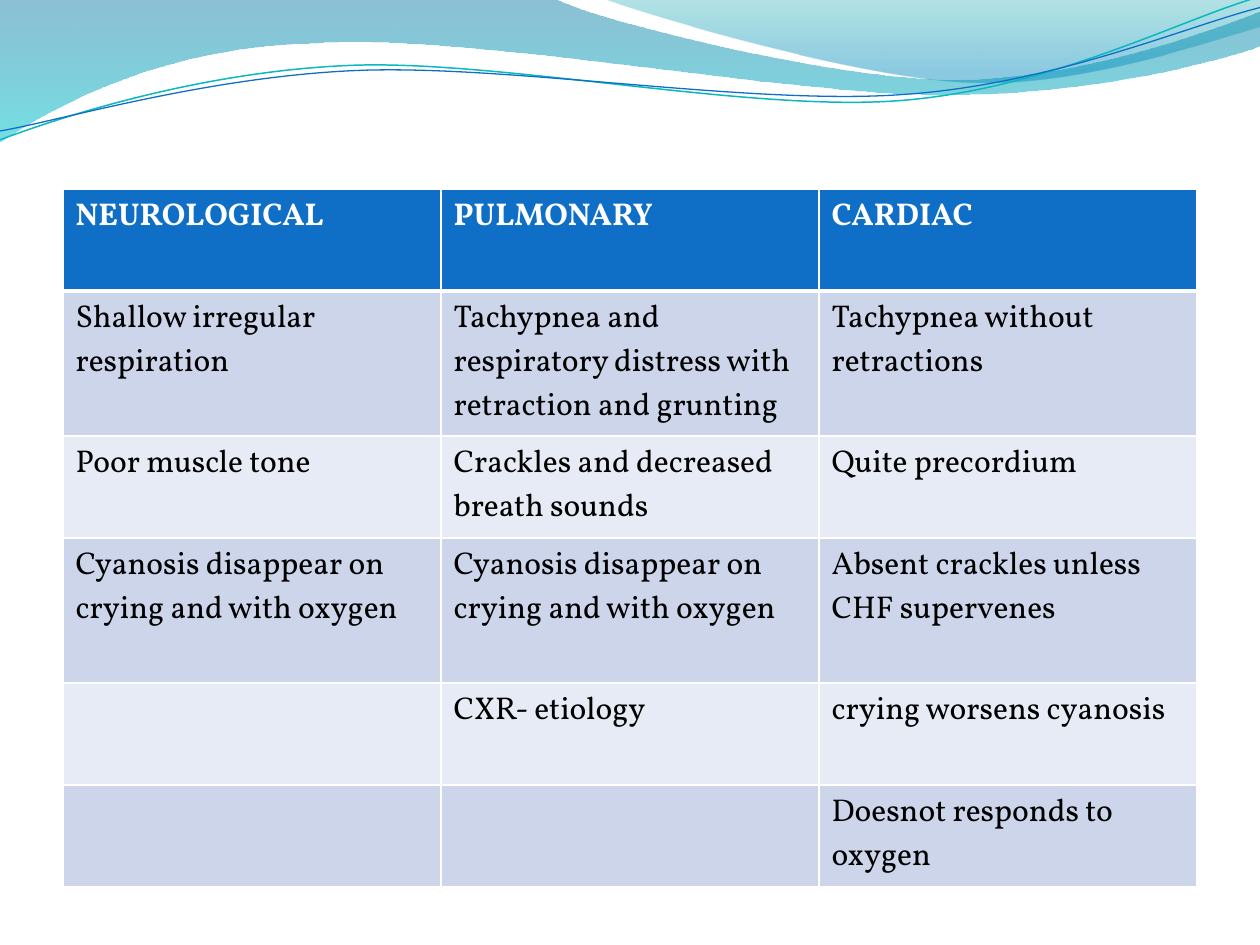
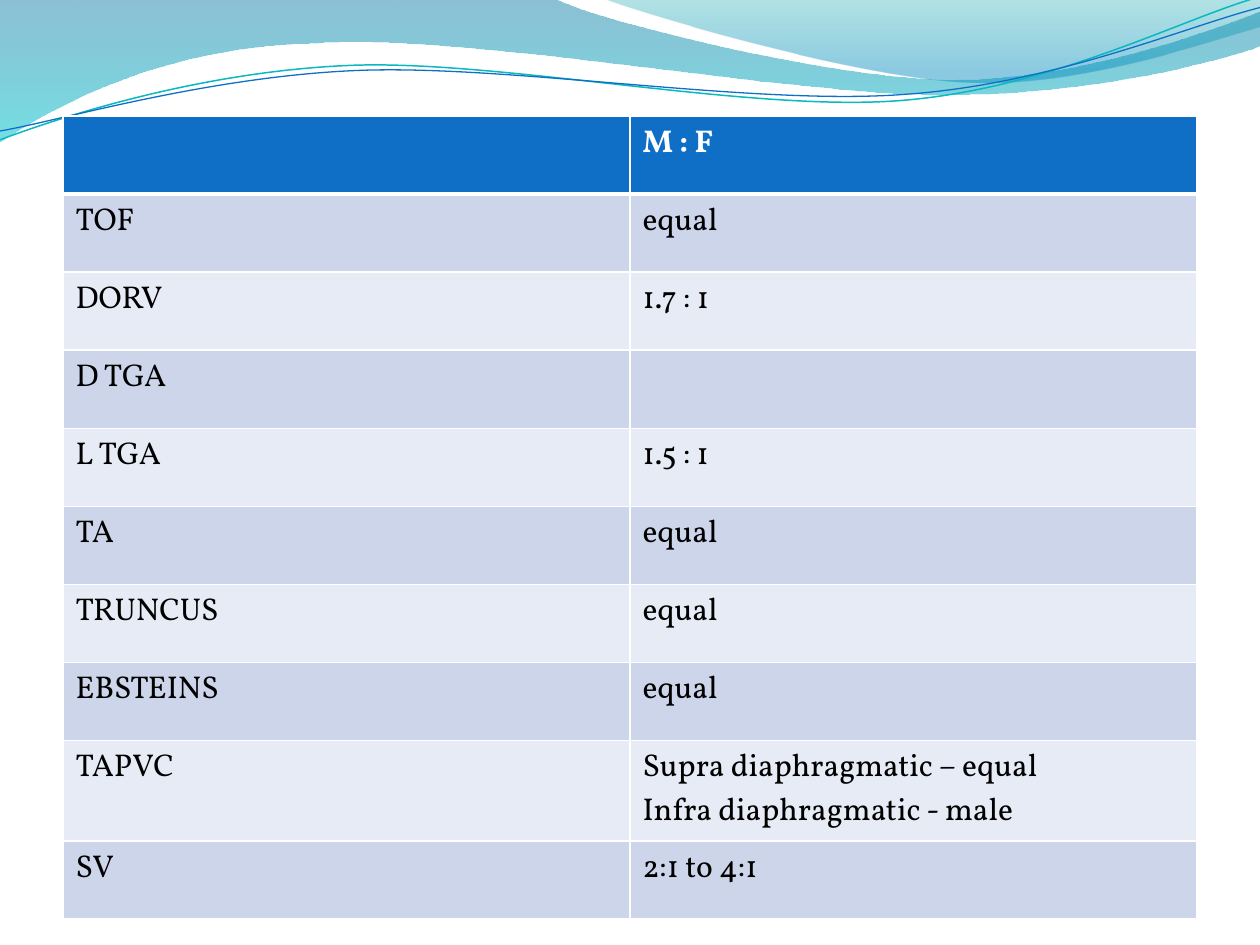
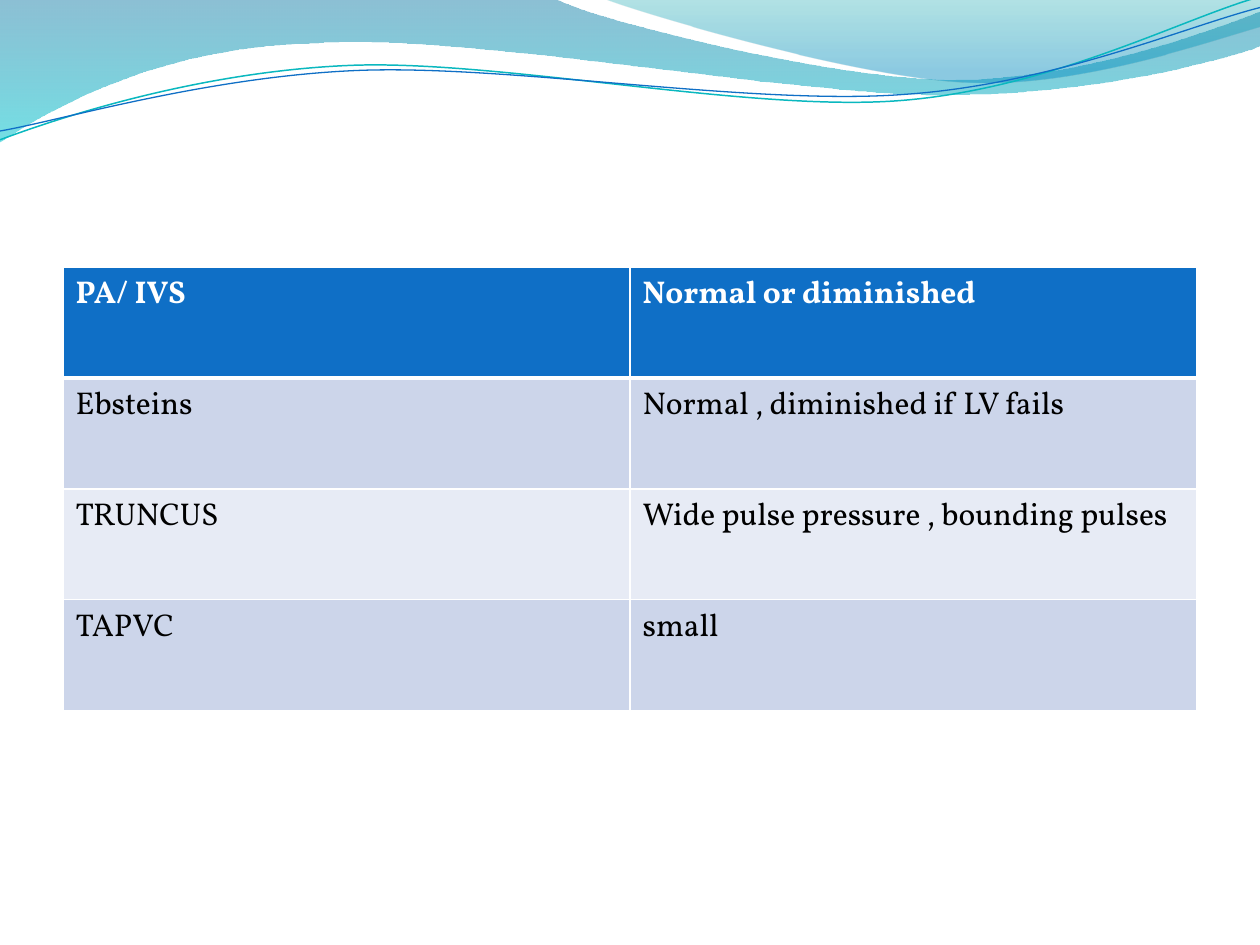
from lxml import etree
from pptx import Presentation
from pptx import util as u
from pptx.dml.color import RGBColor
from pptx.oxml import ns

COLORS = {
    "header": "0F6FC6", "odd": "CCD5EA", "even": "E7EBF5",
    "white": "FFFFFF", "black": "000000", "teal": "0AB8BF",
    "deep": "0074A1", "aqua": "00C6CF", "sea": "00A1A9", "sky": "008BBF",
}
FONT = "Vollkorn"

BROAD_BAND = [
    (0, 0), (4.4, -0.01),
    (4.76, 0.17, 6.64, 0.63, 7.58, 0.63), (8.53, 0.63, 9.58, 0.26, 10, 0.09),
    (10.01, 0.36),
    (9.83, 0.44, 8.7, 0.76, 7.46, 0.75), (6.22, 0.75, 3.82, 0.28, 2.57, 0.34),
    (1.29, 0.36, 0.46, 0.83, -0.01, 1.13), (0, 0),
]
RIGHT_BAND = [
    (4.79, -0.01),
    (5.09, 0.11, 6.82, 0.62, 7.69, 0.65), (8.56, 0.69, 9.61, 0.32, 10, 0.21),
    (10, 0), (4.79, -0.01),
]
TEAL_WAVE = [
    (0, 1.11),
    (0.48, 0.93, 1.58, 0.57, 2.77, 0.52), (3.95, 0.47, 5.93, 0.89, 7.13, 0.8),
    (8.33, 0.71, 9.38, 0.15, 9.98, -0.02),
]
BLUE_WAVE = [
    (0, 1.04),
    (0.47, 0.96, 1.64, 0.61, 2.83, 0.56), (4.03, 0.51, 5.97, 0.84, 7.17, 0.75),
    (8.36, 0.67, 9.41, 0.21, 10, 0.06),
]

SIGNS = [
    ["NEUROLOGICAL", "PULMONARY", "CARDIAC"],
    ["Shallow irregular respiration",
     "Tachypnea and respiratory distress with retraction and grunting",
     "Tachypnea without retractions"],
    ["Poor muscle tone", "Crackles and decreased breath sounds", "Quite precordium"],
    ["Cyanosis disappear on crying and with oxygen",
     "Cyanosis disappear on crying and with oxygen",
     "Absent crackles unless CHF supervenes"],
    ["", "CXR- etiology", "crying worsens cyanosis"],
    ["", "", "Doesnot responds to oxygen"],
]
SEX_RATIO = [
    ["", "M : F"],
    ["TOF", "equal"],
    ["DORV", "1.7 : 1"],
    ["D TGA", ""],
    ["L TGA", "1.5 : 1"],
    ["TA", "equal"],
    ["TRUNCUS", "equal"],
    ["EBSTEINS", "equal"],
    ["TAPVC", "Supra diaphragmatic – equal\nInfra diaphragmatic - male"],
    ["SV", "2:1 to 4:1"],
]
PULSES = [
    ["PA/ IVS", "Normal or diminished"],
    ["Ebsteins", "Normal , diminished if LV fails"],
    ["TRUNCUS", "Wide pulse pressure , bounding pulses"],
    ["TAPVC", "small"],
]


def rgb(name):
    return RGBColor.from_string(COLORS[name])


def write(tf, content, size=18, color="black", bold=False):
    for i, line in enumerate(content.split("\n")):
        p = tf.paragraphs[0] if i == 0 else tf.add_paragraph()
        p.font.size = u.Pt(size)
        if line:
            r = p.add_run()
            r.text = line
            r.font.name = FONT
            r.font.size = u.Pt(size)
            r.font.bold = bold
            r.font.color.rgb = rgb(color)


def bend(sp, segments):
    lines = iter(list(sp.element.iter(ns.qn("a:lnTo"))))
    for seg in segments:
        group = [next(lines) for _ in range(len(seg) // 2)]
        if len(group) == 3:
            curve = etree.Element(ns.qn("a:cubicBezTo"))
            group[0].addprevious(curve)
            for line in group:
                curve.append(line[0])
                line.getparent().remove(line)


class Deck:
    """Hold the shared style and the current slide."""

    def __init__(self):
        self.prs = Presentation()
        self.prs.slide_width = u.Inches(10)
        self.prs.slide_height = u.Inches(7.5)
        self.layout = self.prs.slide_layouts[6]
        for ph in list(self.layout.placeholders):
            ph.element.getparent().remove(ph.element)
        self.slide = None

    def new_slide(self):
        self.slide = self.prs.slides.add_slide(self.layout)

    def outline(self, segments, closed):
        points = [(u.Inches(x), u.Inches(y))
                  for seg in segments for x, y in zip(seg[::2], seg[1::2])]
        builder = self.slide.shapes.build_freeform(*points[0])
        builder.add_line_segments(points[1:], close=closed)
        sp = builder.convert_to_shape()
        bend(sp, segments[1:])
        sp.shadow.inherit = False
        return sp

    def band(self, segments, stops):
        sp = self.outline(segments, True)
        sp.line.fill.background()
        sp.fill.gradient()
        sp.fill.gradient_angle = 270
        for stop, (position, color, _) in zip(sp.fill.gradient_stops, stops):
            stop.position = position
            stop.color.rgb = rgb(color)
        for clr, (_, _, opacity) in zip(sp.element.iter(ns.qn("a:srgbClr")), stops):
            etree.SubElement(clr, ns.qn("a:alpha"), val=str(opacity * 1000))
        return sp

    def wave(self, segments, color, width):
        sp = self.outline(segments, False)
        sp.fill.background()
        sp.line.color.rgb = rgb(color)
        sp.line.width = u.Pt(width)
        return sp

    def backdrop(self):
        parts = [
            self.band(BROAD_BAND, [(0, "deep", 45), (1, "aqua", 55)]),
            self.band(RIGHT_BAND, [(0, "sea", 30), (0.8, "sky", 45)]),
            self.wave(TEAL_WAVE, "teal", 0.85),
            self.wave(BLUE_WAVE, "header", 0.75),
        ]
        for sp in parts:
            self.layout.shapes.element.append(sp.element)

    def borders(self, cell, top, bottom):
        tc_pr = cell._tc.get_or_add_tcPr()
        for side, width in (("L", 1), ("R", 1), ("T", top), ("B", bottom)):
            ln = etree.SubElement(tc_pr, ns.qn(f"a:ln{side}"), w=str(u.Pt(width)))
            fill = etree.SubElement(ln, ns.qn("a:solidFill"))
            etree.SubElement(fill, ns.qn("a:srgbClr"), val=COLORS["white"])

    def table(self, rows, top, heights):
        left, width = 0.5, 9
        columns = len(rows[0])
        frame = self.slide.shapes.add_table(
            len(rows), columns, u.Inches(left), u.Inches(top),
            u.Inches(width), u.Inches(sum(heights)))
        tbl = frame.table
        for column in tbl.columns:
            column.width = u.Inches(width / columns)
        for i, (values, height) in enumerate(zip(rows, heights)):
            tbl.rows[i].height = u.Inches(height)
            header = i == 0
            fill = "header" if header else ("odd" if i % 2 else "even")
            for j, value in enumerate(values):
                cell = tbl.cell(i, j)
                self.borders(cell, 3 if i == 1 else 1, 3 if header else 1)
                cell.fill.solid()
                cell.fill.fore_color.rgb = rgb(fill)
                write(cell.text_frame, value, bold=header,
                      color="white" if header else "black")


def main():
    deck = Deck()
    deck.new_slide()
    deck.backdrop()
    deck.table(SIGNS, 1.5, [0.81, 1.15, 0.81, 1.15, 0.81, 0.81])
    deck.new_slide()
    deck.table(SEX_RATIO, 0.92, [0.62] * len(SEX_RATIO))
    deck.new_slide()
    deck.table(PULSES, 2.12, [0.88] * len(PULSES))
    deck.prs.save("out.pptx")


if __name__ == "__main__":
    main()
